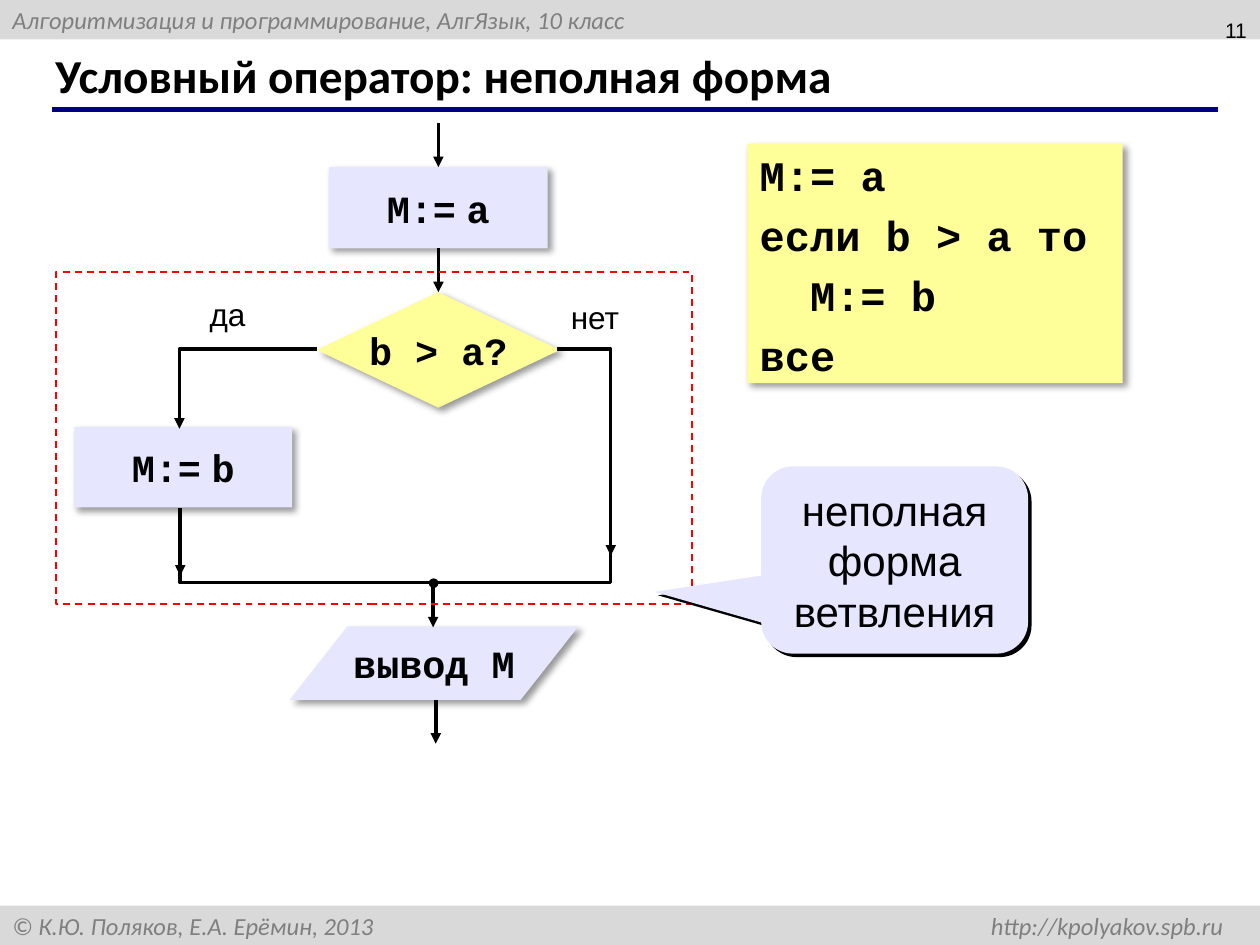
from dataclasses import dataclass

import pptx
import pptx.dml.color
import pptx.enum.dml
import pptx.enum.shapes
import pptx.enum.text
import pptx.oxml
import pptx.oxml.ns
import pptx.util
from lxml import etree

Pt = pptx.util.Pt
KIND = pptx.enum.shapes.MSO_SHAPE
ALIGN = pptx.enum.text.PP_ALIGN
ANCHOR = pptx.enum.text.MSO_ANCHOR
COLORS = {
    "black": "000000", "grey": "7F7F7F", "bar": "D9D9D9", "navy": "000080",
    "lilac": "E6E6FF", "yellow": "FFFF99", "red": "FF0000",
}
Point = tuple[float, float]
Area = tuple[float, float, float, float]


@dataclass
class Shade:
    alpha: int = 40
    blur: float = 4
    dist: float = 3


@dataclass
class Step:
    kind: KIND
    area: Area
    text: str
    fill: str = "lilac"
    gap: str = ""


@dataclass
class Arrow:
    start: Point
    end: Point
    source: str = ""
    target: str = ""


@dataclass
class Path:
    points: list[Point]
    head: bool = True


STEPS = {
    "first": Step(KIND.RECTANGLE, (188, 95.5, 125, 46.5), "M:= a", gap="Arial"),
    "test": Step(KIND.FLOWCHART_DECISION, (181, 167, 139, 66), "b > a?", "yellow"),
    "then": Step(KIND.RECTANGLE, (42.5, 244, 124.5, 46), "M:= b", gap="Arial"),
    "print": Step(KIND.FLOWCHART_DATA, (165.5, 358, 165, 42), "вывод M"),
}
ARROWS = [
    Arrow((250.5, 70.5), (250.5, 95.5), target="first"),
    Arrow((250.5, 142), (250.5, 167), "first", "test"),
    Arrow((249, 400), (249, 425)),
    Arrow((103, 304), (103, 329)),
    Arrow((247.5, 333), (247.5, 358.5)),
]
PATHS = [
    Path([(318.5, 199.5), (349, 199.5), (349, 317.5)]),
    Path([(181, 199.5), (102.5, 199.5), (102.5, 245)]),
    Path([(103, 290), (103, 333), (349, 333), (349, 290)], head=False),
]
LABELS = {"да": (103, 165, 54, 29), "нет": (313, 166.5, 54, 29)}


def color(name: str) -> pptx.dml.color.RGBColor:
    return pptx.dml.color.RGBColor.from_string(COLORS[name])


def write(shape, text: str, *, font: str = "Arial", size: float = 18,
          tint: str = "black", bold: bool = False, italic: bool = False,
          align=ALIGN.LEFT, anchor=ANCHOR.MIDDLE, wrap: bool = True,
          before: float = 0, gap: str = "") -> None:
    """Fill a shape with one paragraph per row; gap is the font of its first space."""
    frame = shape.text_frame
    frame.word_wrap = wrap
    frame.vertical_anchor = anchor
    for num, row in enumerate(text.split("\n")):
        para = frame.add_paragraph() if num else frame.paragraphs[0]
        para.alignment = align
        para.space_before = Pt(before)
        parts = row.partition(" ") if gap else (row,)
        for part in parts:
            run = para.add_run()
            run.text = part
            run.font.name = gap if part == " " else font
            run.font.size = Pt(size)
            run.font.bold = bold
            run.font.italic = italic
            run.font.color.rgb = color(tint)


def stroke(shape, tint: str, width: float, head: bool = False) -> None:
    shape.line.color.rgb = color(tint)
    shape.line.width = Pt(width)
    if head:
        line = shape.element.spPr.find(pptx.oxml.ns.qn("a:ln"))
        etree.SubElement(line, pptx.oxml.ns.qn("a:tailEnd"), type="triangle")


def draw(slide, kind: KIND, area: Area, fill: str = "", shade: Shade | None = None):
    """Add a preset shape without outline, with an optional fill and shadow."""
    shape = slide.shapes.add_shape(kind, *map(Pt, area))
    shape.shadow.inherit = False
    shape.line.fill.background()
    if fill:
        shape.fill.solid()
        shape.fill.fore_color.rgb = color(fill)
    else:
        shape.fill.background()
    if shade:
        effects = shape.element.spPr.find(pptx.oxml.ns.qn("a:effectLst"))
        effects.append(pptx.oxml.parse_xml(
            f'<a:outerShdw {pptx.oxml.ns.nsdecls("a")} blurRad="{Pt(shade.blur)}" '
            f'dist="{Pt(shade.dist)}" dir="2700000" algn="tl" rotWithShape="0">'
            f'<a:srgbClr val="{COLORS["black"]}"><a:alpha val="{shade.alpha * 1000}"/>'
            "</a:srgbClr></a:outerShdw>"))
    return shape


def link(slide, start: Point, end: Point, tint: str = "black",
         width: float = 2, head: bool = True):
    """Add a straight connector."""
    kind = pptx.enum.shapes.MSO_CONNECTOR.STRAIGHT
    wire = slide.shapes.add_connector(kind, *map(Pt, start + end))
    stroke(wire, tint, width, head)
    etree.SubElement(wire.element.spPr, pptx.oxml.ns.qn("a:effectLst"))
    return wire


def trace(slide, path: Path) -> None:
    """Add an open polyline."""
    first, *rest = [(Pt(x), Pt(y)) for x, y in path.points]
    pen = slide.shapes.build_freeform(*first)
    pen.add_line_segments(rest, close=False)
    shape = pen.convert_to_shape()
    shape.shadow.inherit = False
    shape.fill.background()
    stroke(shape, "black", 2, path.head)


def frame(slide) -> None:
    """Add the bars, the rule, the title and the page number."""
    style = dict(font="Calibri", size=14, tint="grey", italic=True)
    top = draw(slide, KIND.RECTANGLE, (0, 0, 720, 22.5), "bar")
    write(top, "Алгоритмизация и программирование, АлгЯзык, 10 класс", **style)
    foot = draw(slide, KIND.RECTANGLE, (0, 517.5, 720, 22.5), "bar")
    write(foot, "© К.Ю. Поляков, Е.А. Ерёмин, 2013 \thttp://kpolyakov.spb.ru", **style)
    props = foot.text_frame.paragraphs[0]._p.get_or_add_pPr()
    tabs = etree.SubElement(props, pptx.oxml.ns.qn("a:tabLst"))
    etree.SubElement(tabs, pptx.oxml.ns.qn("a:tab"), pos=str(Pt(692)), algn="r")
    link(slide, (29.5, 62.5), (696, 62.5), "navy", 3, head=False)

    title = slide.shapes.title
    title.left, title.top, title.width, title.height = map(Pt, (24.5, 24, 659.5, 37.5))
    write(title, "Условный оператор: неполная форма", font="Calibri", size=27, bold=True)
    page = slide.shapes.add_textbox(*map(Pt, (551.5, -1.5, 168, 37.5)))
    write(page, "11", size=12, align=ALIGN.RIGHT)


def chart(slide) -> None:
    """Add the flowchart."""
    nodes = {}
    for name, step in STEPS.items():
        nodes[name] = draw(slide, step.kind, step.area, step.fill, Shade())
        write(nodes[name], step.text, font="Courier New", size=22, bold=True,
              align=ALIGN.CENTER, wrap=False, gap=step.gap)
    for arrow in ARROWS:
        wire = link(slide, arrow.start, arrow.end)
        if arrow.source:
            wire.begin_connect(nodes[arrow.source], 2)
        if arrow.target:
            wire.end_connect(nodes[arrow.target], 0)
    for path in PATHS:
        trace(slide, path)
    dot = draw(slide, KIND.OVAL, (245.5, 331, 4.5, 4.5), "black")
    stroke(dot, "black", 1)
    for text, area in LABELS.items():
        label = slide.shapes.add_textbox(*map(Pt, area))
        write(label, text, align=ALIGN.CENTER, anchor=ANCHOR.TOP)
    zone = draw(slide, KIND.RECTANGLE, (32, 155.5, 363.5, 189.5))
    stroke(zone, "red", 1)
    zone.line.dash_style = pptx.enum.dml.MSO_LINE.DASH


def notes(slide) -> None:
    """Add the callout and the code."""
    call = draw(slide, KIND.ROUNDED_RECTANGULAR_CALLOUT, (435, 266.5, 152.5, 107),
                "lilac", Shade(100, 0, 2.8))
    for num, value in enumerate((-0.9, 0.17, 0.17)):
        call.adjustments[num] = value
    write(call, "неполная форма ветвления", size=24, align=ALIGN.CENTER)
    code = draw(slide, KIND.RECTANGLE, (427, 82, 214.5, 137), "yellow", Shade())
    write(code, "M:= a\nесли b > a то\nM:= b\nвсе", font="Courier New", size=24,
          bold=True, anchor=ANCHOR.TOP, before=5.4)
    body = code.text_frame.paragraphs[2]._p.get_or_add_pPr()
    body.set("marL", str(Pt(28.8)))


def main() -> None:
    deck = pptx.Presentation()
    deck.slide_width, deck.slide_height = Pt(720), Pt(540)
    slide = deck.slides.add_slide(deck.slide_layouts.get_by_name("Title Only"))
    frame(slide)
    chart(slide)
    notes(slide)
    deck.save("out.pptx")


if __name__ == "__main__":
    main()
